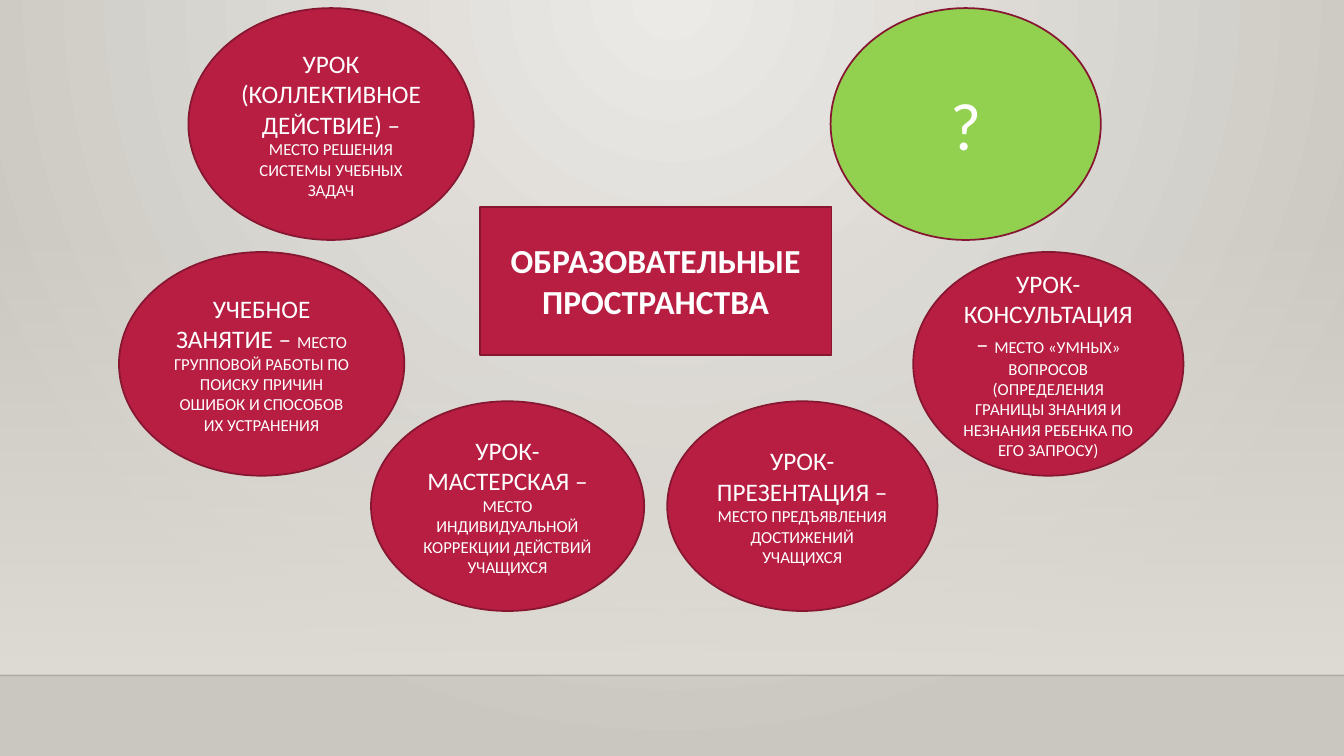
from lxml import etree
from pptx import Presentation
from pptx.dml.color import RGBColor
from pptx.enum.shapes import MSO_CONNECTOR, MSO_SHAPE
from pptx.enum.text import MSO_ANCHOR, MSO_AUTO_SIZE, PP_ALIGN
from pptx.oxml.ns import qn
from pptx.util import Pt

RECT, OVAL = MSO_SHAPE.RECTANGLE, MSO_SHAPE.OVAL
STRAIGHT = MSO_CONNECTOR.STRAIGHT
MIDDLE, CENTER, NO_FIT = MSO_ANCHOR.MIDDLE, PP_ALIGN.CENTER, MSO_AUTO_SIZE.NONE

CRIMSON = RGBColor(0xB7, 0x1E, 0x42)
DARK_RED = RGBColor(0x87, 0x16, 0x31)
GREEN = RGBColor(0x92, 0xD0, 0x50)
WHITE = RGBColor(0xFF, 0xFF, 0xFF)
BG_LIGHT = RGBColor(0xEC, 0xEA, 0xE7)
BG_DARK = RGBColor(0xCA, 0xC7, 0xC1)
WALL = RGBColor(0xDF, 0xDB, 0xD5)
NEAR_BLACK = RGBColor(0x00, 0x00, 0x01)

W, H, FLOOR = 960, 540, 482.4
WALL_TOP = 159.1
TOP_ROW, MID_ROW, LOW_ROW = (5.8, 165.6), (180, 159.8), (286.6, 149.8)

OVALS = [
    (134.6, 203.8, TOP_ROW, CRIMSON, [
        ("УРОК (КОЛЛЕКТИВНОЕ ДЕЙСТВИЕ) – ", 18),
        ("МЕСТО РЕШЕНИЯ СИСТЕМЫ УЧЕБНЫХ ЗАДАЧ", 12)]),
    (85, 203.8, MID_ROW, CRIMSON, [
        ("УЧЕБНОЕ ЗАНЯТИЕ – ", 18),
        ("МЕСТО ГРУППОВОЙ РАБОТЫ ПО ПОИСКУ ПРИЧИН ОШИБОК И СПОСОБОВ ИХ УСТРАНЕНИЯ", 12)]),
    (265, 195.1, LOW_ROW, CRIMSON, [
        ("УРОК-МАСТЕРСКАЯ – ", 18),
        ("МЕСТО ИНДИВИДУАЛЬНОЙ КОРРЕКЦИИ ДЕЙСТВИЙ УЧАЩИХСЯ", 12)]),
    (652.3, 193, MID_ROW, CRIMSON, [
        ("УРОК-КОНСУЛЬТАЦИЯ – ", 18),
        ("МЕСТО «УМНЫХ» ВОПРОСОВ (ОПРЕДЕЛЕНИЯ ГРАНИЦЫ ЗНАНИЯ И НЕЗНАНИЯ РЕБЕНКА ПО ЕГО ЗАПРОСУ)", 12)]),
    (476.6, 193, LOW_ROW, CRIMSON, [
        ("УРОК-ПРЕЗЕНТАЦИЯ – ", 18),
        ("МЕСТО ПРЕДЪЯВЛЕНИЯ ДОСТИЖЕНИЙ УЧАЩИХСЯ", 12)]),
    (593.3, 193, TOP_ROW, GREEN, [("?", 48)]),
]


def set_alpha(color_el, percent):
    etree.SubElement(color_el, qn("a:alpha")).set("val", str(percent * 1000))


def fill_box(sp, color, runs, bold=False):
    sp.shadow.inherit = False
    sp.fill.solid()
    sp.fill.fore_color.rgb = color
    sp.line.color.rgb = DARK_RED
    sp.line.width = Pt(1.25)
    tf = sp.text_frame
    frame = {"word_wrap": True, "auto_size": NO_FIT, "vertical_anchor": MIDDLE}
    for name, value in frame.items():
        setattr(tf, name, value)
    p = tf.paragraphs[0]
    p.alignment = CENTER
    for text, size in runs:
        r = p.add_run()
        r.text = text
        font = {"name": "Calibri", "size": Pt(size), "bold": bold}
        for name, value in font.items():
            setattr(r.font, name, value)
        r.font.color.rgb = WHITE


prs = Presentation()
prs.slide_width, prs.slide_height = Pt(W), Pt(H)
s = prs.slides.add_slide(prs.slide_layouts[5])

bg = s.background.fill
bg.gradient()
for stop, color in zip(bg.gradient_stops, (BG_LIGHT, BG_DARK)):
    stop.color.rgb = color
grad = s.element.find(".//" + qn("p:bgPr")).find(qn("a:gradFill"))
lin = grad.find(qn("a:lin"))
radial = etree.Element(qn("a:path"), {"path": "circle"})
etree.SubElement(radial, qn("a:fillToRect"), {"l": "43000", "r": "43000", "b": "100000"})
grad.replace(lin, radial)

wall = s.shapes.add_shape(RECT, 0, Pt(WALL_TOP), Pt(W), Pt(FLOOR - WALL_TOP))
wall.shadow.inherit = False
wall.line.fill.background()
wall.fill.gradient()
wall.fill.gradient_angle = 270
for stop in wall.fill.gradient_stops:
    stop.color.rgb = WALL
set_alpha(wall.element.spPr.find(".//" + qn("a:srgbClr")), 0)

edge = s.shapes.add_connector(STRAIGHT, 0, Pt(FLOOR), Pt(W), Pt(FLOOR))
edge.line.color.rgb = NEAR_BLACK
edge.line.width = Pt(1)
edge_pr = edge.element.spPr
set_alpha(edge_pr.find(".//" + qn("a:srgbClr")), 20)
etree.SubElement(edge_pr, qn("a:effectLst"))

title = s.shapes.title
title.left, title.top, title.width, title.height = Pt(342.7), Pt(147.6), Pt(251.3), Pt(105.8)
fill_box(title, CRIMSON, [("ОБРАЗОВАТЕЛЬНЫЕ ПРОСТРАНСТВА", 24)], bold=True)
edge.element.addnext(title.element)

for left, width, (top, height), color, runs in OVALS:
    sp = s.shapes.add_shape(OVAL, Pt(left), Pt(top), Pt(width), Pt(height))
    fill_box(sp, color, runs)

prs.save("out.pptx")
